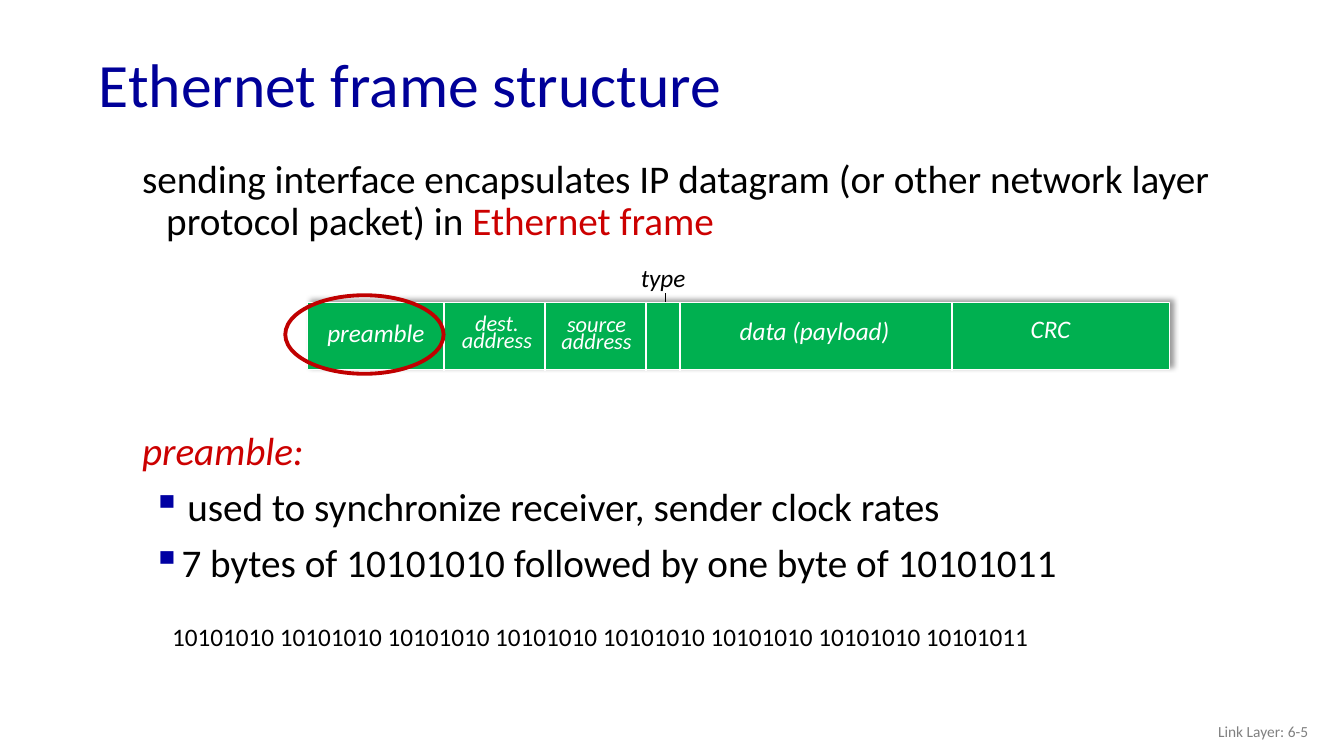
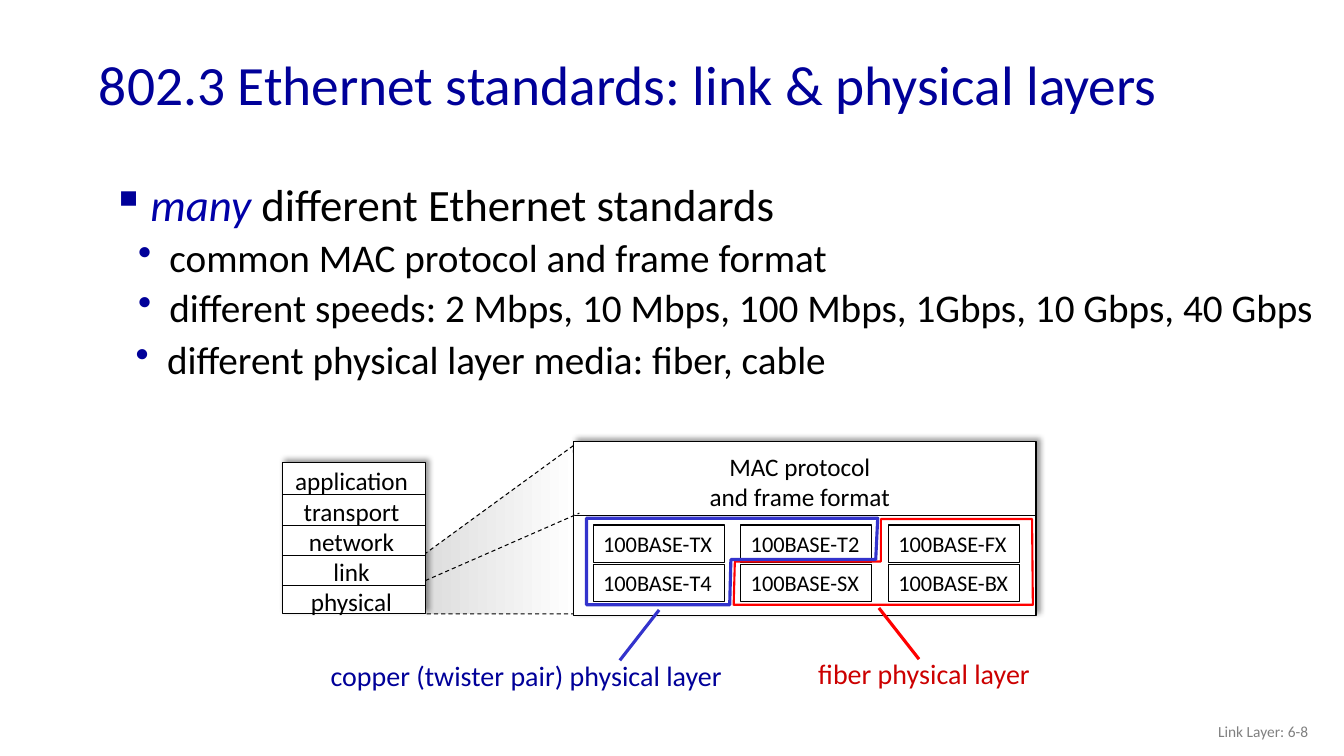
"""Build two Ethernet slides: frame structure and 802.3 standards."""
from dataclasses import dataclass
from typing import Optional

import lxml.etree
import pptx
import pptx.dml.color
import pptx.enum.dml
import pptx.enum.shapes
import pptx.enum.text
import pptx.oxml.ns
import pptx.util

Cm = pptx.util.Cm
Pt = pptx.util.Pt
qn = pptx.oxml.ns.qn
ALIGN = pptx.enum.text.PP_ALIGN
ANCHOR = pptx.enum.text.MSO_ANCHOR
SHAPE = pptx.enum.shapes.MSO_SHAPE
DASH = pptx.enum.dml.MSO_LINE.DASH

FONT = "Calibri"
COLORS = {
    "title": "000099", "footer": "808080", "black": "000000", "white": "FFFFFF",
    "accent": "CC0000", "frame": "00B050", "ring": "C00000", "bullet": "0000A3",
    "many": "0000A8", "fiber": "FF0000", "copper": "3333CC", "shade": "DDDDDD",
}


@dataclass(frozen=True)
class Box:
    left: float
    top: float
    width: float
    height: float

    def emu(self) -> tuple:
        return Cm(self.left), Cm(self.top), Cm(self.width), Cm(self.height)


@dataclass(frozen=True)
class Run:
    text: str
    size: float = 18
    color: str = "black"
    italic: bool = False


@dataclass(frozen=True)
class Para:
    runs: tuple
    align: ALIGN = ALIGN.LEFT
    spacing: Optional[float] = None
    before: float = 0
    margin: float = 0
    indent: float = 0
    bullet: str = ""
    bullet_color: str = "title"


@dataclass(frozen=True)
class Field:
    lines: tuple
    box: Box
    size: float = 18


@dataclass(frozen=True)
class Medium:
    label: str
    box: Box
    text_color: str
    color: str
    outline: tuple
    outline_width: float
    start: tuple
    end: tuple


def rgb(name: str) -> pptx.dml.color.RGBColor:
    return pptx.dml.color.RGBColor.from_string(COLORS[name])


def write(tf, paras: list) -> None:
    for i, para in enumerate(paras):
        p = tf.paragraphs[0] if i == 0 else tf.add_paragraph()
        p.alignment = para.align
        p.space_before = Pt(para.before)
        if para.spacing:
            p.line_spacing = para.spacing
        pPr = p._p.get_or_add_pPr()
        pPr.set("marL", str(Cm(para.margin)))
        pPr.set("indent", str(Cm(para.indent)))
        if para.bullet:
            clr = lxml.etree.SubElement(pPr, qn("a:buClr"))
            lxml.etree.SubElement(clr, qn("a:srgbClr"), val=COLORS[para.bullet_color])
            lxml.etree.SubElement(pPr, qn("a:buChar"), char=para.bullet)
        for run in para.runs:
            r = p.add_run()
            r.text = run.text
            r.font.name = FONT
            r.font.size = Pt(run.size)
            r.font.italic = run.italic
            r.font.color.rgb = rgb(run.color)


def add_text(s, box: Box, paras: list, wrap: bool = True, anchor: ANCHOR = ANCHOR.TOP) -> None:
    tf = s.shapes.add_textbox(*box.emu()).text_frame
    tf.word_wrap = wrap
    tf.vertical_anchor = anchor
    write(tf, paras)


def style(sp, fill: Optional[str], line: str, width: float) -> None:
    sp.shadow.inherit = False
    if fill:
        sp.fill.solid()
        sp.fill.fore_color.rgb = rgb(fill)
    else:
        sp.fill.background()
    sp.line.color.rgb = rgb(line)
    sp.line.width = Pt(width)


def add_box(s, box: Box, fill: Optional[str] = None, line: str = "black",
            width: float = 0.75, shape: SHAPE = SHAPE.RECTANGLE, shadow: bool = False):
    sp = s.shapes.add_shape(shape, *box.emu())
    style(sp, fill, line, width)
    if shadow:
        effects = sp._element.spPr.find(qn("a:effectLst"))
        outer = lxml.etree.SubElement(effects, qn("a:outerShdw"), blurRad=str(Pt(4)),
                                      dist=str(Pt(3)), dir=str(315 * 60000), rotWithShape="0")
        clr = lxml.etree.SubElement(outer, qn("a:srgbClr"), val=COLORS["black"])
        lxml.etree.SubElement(clr, qn("a:alpha"), val="40000")
    return sp


def add_line(s, start: tuple, end: tuple, color: str = "black",
             width: float = 0.75, dashed: bool = False) -> None:
    cx = s.shapes.add_connector(pptx.enum.shapes.MSO_CONNECTOR.STRAIGHT,
                                *(Cm(v) for v in start + end))
    cx.line.color.rgb = rgb(color)
    cx.line.width = Pt(width)
    if dashed:
        cx.line.dash_style = DASH
    lxml.etree.SubElement(cx._element.spPr, qn("a:effectLst"))


def add_outline(s, points: tuple, color: str = "black", width: float = 0.75):
    first, *rest = [(Cm(x), Cm(y)) for x, y in points]
    builder = s.shapes.build_freeform(*first)
    builder.add_line_segments(rest, close=True)
    sp = builder.convert_to_shape()
    style(sp, None, color, width)
    return sp


def add_slide(prs, title: str, number: int, size: float = 44):
    s = prs.slides.add_slide(prs.slide_layouts[5])
    sp = s.shapes.title
    sp.left, sp.top, sp.width, sp.height = Box(2.24, 0.97, 29.21, 2.49).emu()
    tf = sp.text_frame
    tf.auto_size = pptx.enum.text.MSO_AUTO_SIZE.NONE
    tf.vertical_anchor = ANCHOR.MIDDLE
    write(tf, [Para((Run(title, size, "title"),), spacing=0.9)])
    add_text(s, Box(25.6, 17.91, 7.62, 1.02),
             [Para((Run(f"Link Layer: 6-{number}", 11, "footer"),), ALIGN.RIGHT)],
             anchor=ANCHOR.MIDDLE)
    return s


def body(*runs: Run, margin: float, indent: float, before: float = 10,
         bullet: str = "", bullet_color: str = "bullet") -> Para:
    return Para(runs, ALIGN.LEFT, 0.9, before, margin, indent, bullet, bullet_color)


def sub_point(text: str) -> Para:
    return body(Run(text, 28), margin=1.45, indent=-0.79, before=5.6,
                bullet="•", bullet_color="title")


def centered(lines: tuple) -> list:
    return [Para((Run(line),), ALIGN.CENTER) for line in lines]


def frame_slide(prs) -> None:
    s = add_slide(prs, "Ethernet frame structure", 5)
    add_text(s, Box(2.95, 3.89, 30.94, 6.2), [body(
        Run("sending interface encapsulates IP datagram (or other network layer "
            "protocol packet) in ", 28),
        Run("Ethernet frame", 28, "accent"), margin=0.99, indent=-0.61)])

    add_line(s, (16.76, 7.39), (16.76, 8.03))
    add_box(s, Box(7.75, 7.62, 21.72, 1.7), "frame", "white", shadow=True)
    for x in (11.2, 13.74, 16.28, 17.14, 23.98):
        add_line(s, (x, 7.6), (x, 9.35), "white", 1.5)
    fields = [
        Field(("dest.", "address"), Box(11.05, 7.92, 2.95, 1.02), 16),
        Field(("source", "address"), Box(13.56, 7.95, 2.95, 1.02), 16),
        Field(("data (payload)",), Box(18.14, 8.15, 4.78, 0.66)),
        Field(("CRC",), Box(24.99, 8.1, 2.97, 0.66)),
        Field(("preamble",), Box(7.62, 8.2, 3.71, 0.66)),
    ]
    for field in fields:
        add_text(s, field.box, [
            Para((Run(line, field.size, "white", True),), ALIGN.CENTER, Pt(12))
            for line in field.lines])
    add_text(s, Box(15.9, 6.48, 2.67, 0.91), [Para((Run("type", italic=True),))])

    add_text(s, Box(2.95, 10.74, 30.94, 4.42), [
        body(Run("preamble:", 28, "accent", True), margin=0.99, indent=-0.61),
        body(Run("used to synchronize receiver, sender clock rates", 28),
             margin=1.52, indent=-0.88, bullet="▪"),
        body(Run("7 bytes of 10101010 followed by one byte of 10101011", 28),
             margin=1.3, indent=-0.66, bullet="▪"),
    ])
    bits = " ".join(["10101010"] * 7 + ["10101011"])
    add_text(s, Box(4.09, 15.54, 22.35, 1.02), [Para((Run(bits),))], wrap=False)
    add_box(s, Box(7.19, 7.44, 3.99, 1.98), None, "ring", 2.75, SHAPE.OVAL)


def standards_slide(prs) -> None:
    s = add_slide(prs, "802.3 Ethernet standards: link & physical layers", 8, 39.6)
    add_text(s, Box(2.51, 8.46, 31.12, 1.3),
             [sub_point("different physical layer media: fiber, cable")])

    wedge = add_outline(s, ((14.45, 11.23), (10.69, 13.97), (10.72, 15.47), (14.55, 15.47)))
    wedge.line.dash_style = DASH
    wedge.fill.gradient()
    wedge.fill.gradient_angle = 0
    for stop, position, color in zip(wedge.fill.gradient_stops, (0, 1), ("shade", "white")):
        stop.position = position
        stop.color.rgb = rgb(color)

    stack = Box(7.11, 11.66, 3.61, 3.81)
    right = stack.left + stack.width
    add_box(s, stack, "white", shadow=True)
    add_text(s, Box(7.16, 11.61, 3.4, 4.11),
             centered(("application", "transport", "network", "link", "physical")), wrap=False)
    for i in range(4):
        y = 12.47 + 0.76 * i
        add_line(s, (stack.left, y), (right, y))
    for x in (stack.left, right):
        add_line(s, (x, 14.9), (x, 15.38), dashed=True)

    add_box(s, Box(14.45, 11.13, 11.66, 4.37), "white", shadow=True)
    add_line(s, (14.5, 12.98), (26.11, 12.98))
    add_text(s, Box(17.6, 11.25, 5.11, 1.8),
             centered(("MAC protocol", "and frame format")), wrap=False)
    add_line(s, (10.72, 14.63), (14.6, 12.93), dashed=True)

    for row, kinds in enumerate((("TX", "T2", "FX"), ("T4", "SX", "BX"))):
        for col, kind in enumerate(kinds):
            sp = add_box(s, Box(14.95 + 3.72 * col, 13.23 + 0.99 * row, 3.3, 0.94))
            sp.text_frame.word_wrap = False
            write(sp.text_frame, [Para((Run(f"100BASE-{kind}", 16),))])

    media = [
        Medium("fiber physical layer", Box(20.37, 16.41, 5.89, 1.12), "accent", "fiber",
               ((22.2, 13.08), (22.2, 14.15), (18.52, 14.15),
                (18.49, 15.24), (26.03, 15.24), (26.01, 13.08)), 1.5,
               (22.15, 15.32), (23.16, 16.61)),
        Medium("copper (twister pair) physical layer", Box(8.08, 16.48, 10.82, 1.12),
               "title", "copper",
               ((22.12, 13.06), (22.07, 14.1), (18.42, 14.1),
                (18.39, 15.24), (14.78, 15.24), (14.78, 13.06)), 2.25,
               (16.61, 15.37), (15.62, 16.64)),
    ]
    for m in media:
        add_outline(s, m.outline, m.color, m.outline_width)
        add_line(s, m.start, m.end, m.color, 2.25)
        add_text(s, m.box, [Para((Run(m.label, 20, m.text_color),))])

    add_text(s, Box(2.57, 4.47, 31.12, 4.42), [
        body(Run("many ", 32, "many", True), Run("different Ethernet standards", 32),
             margin=0.97, indent=-0.97, before=6.4, bullet="▪", bullet_color="title"),
        sub_point("common MAC protocol and frame format"),
        sub_point("different speeds: 2 Mbps, 10 Mbps, 100 Mbps, 1Gbps, 10 Gbps, 40 Gbps"),
    ])


def main() -> None:
    prs = pptx.Presentation()
    prs.slide_width, prs.slide_height = Cm(33.87), Cm(19.05)
    frame_slide(prs)
    standards_slide(prs)
    prs.save("out.pptx")


if __name__ == "__main__":
    main()
